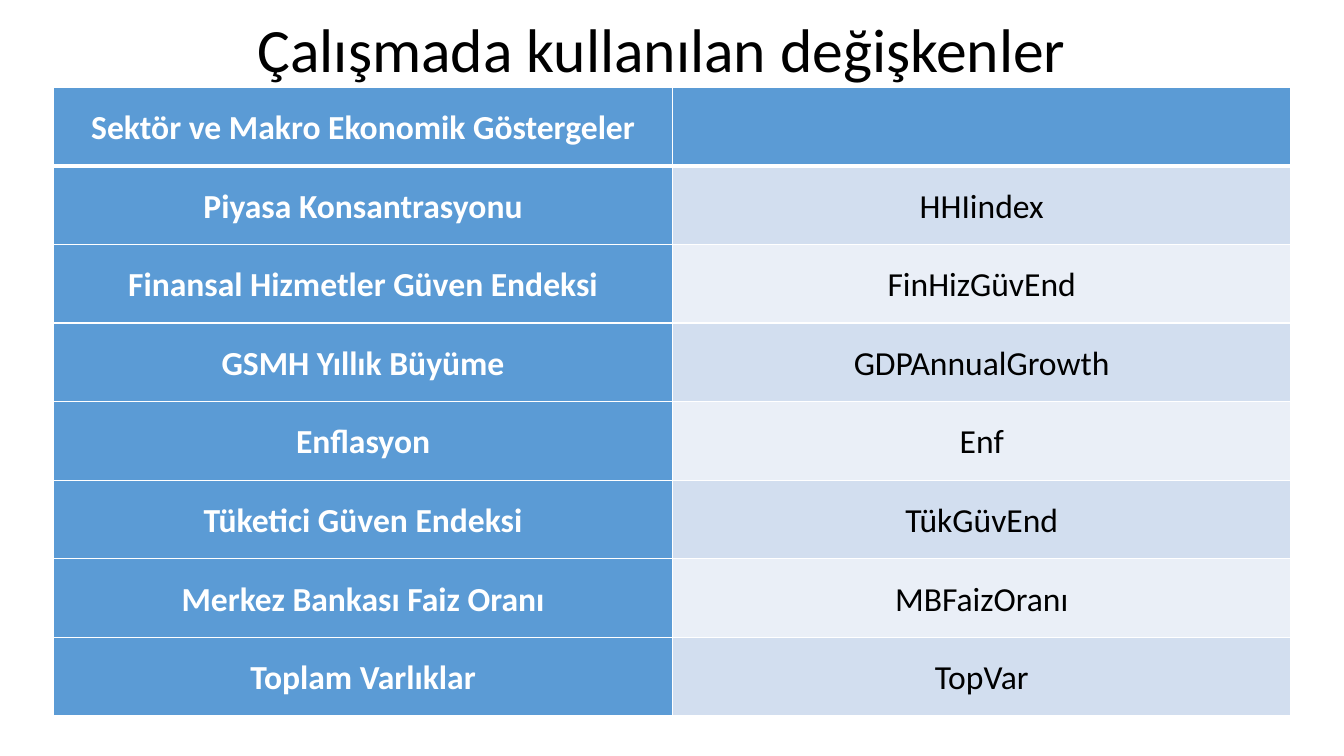
"""Build the slide that lists the sector and macroeconomic variables of the study."""
from lxml.etree import SubElement
from pptx import Presentation
from pptx.dml.color import RGBColor
from pptx.enum.text import MSO_ANCHOR, PP_ALIGN
from pptx.oxml.ns import qn
from pptx.util import Pt


def color(hex_code):
    return RGBColor.from_string(hex_code)


def add_border(cell, side, width):
    line = SubElement(cell._tc.get_or_add_tcPr(), qn(f"a:ln{side}"), w=str(Pt(width)))
    SubElement(SubElement(line, qn("a:solidFill")), qn("a:srgbClr"), val="FFFFFF")


variables = [
    ("Sektör ve Makro Ekonomik Göstergeler", ""),
    ("Piyasa Konsantrasyonu", "HHIindex"),
    ("Finansal Hizmetler Güven Endeksi", "FinHizGüvEnd"),
    ("GSMH Yıllık Büyüme", "GDPAnnualGrowth"),
    ("Enflasyon", "Enf"),
    ("Tüketici Güven Endeksi", "TükGüvEnd"),
    ("Merkez Bankası Faiz Oranı", "MBFaizOranı"),
    ("Toplam Varlıklar", "TopVar"),
]
bands = ["EAEFF7", "D2DEEF"]
row_height = 56.16
column_width = 441.9

presentation = Presentation()
presentation.slide_width, presentation.slide_height = Pt(960), Pt(540)
slide = presentation.slides.add_slide(presentation.slide_layouts[5])

heading = slide.shapes.title
heading.left, heading.top, heading.width, heading.height = Pt(59), Pt(10), Pt(828), Pt(104.4)
heading.text_frame.vertical_anchor = MSO_ANCHOR.TOP
heading.text_frame.text = "Çalışmada kullanılan değişkenler"
heading_line = heading.text_frame.paragraphs[0]
heading_line.alignment = PP_ALIGN.CENTER
heading_line.line_spacing = 0.9
heading_line.font.name = "Calibri"
heading_line.font.size = Pt(44)
heading_line.font.color.rgb = color("000000")

variable_table = slide.shapes.add_table(
    len(variables), 2, Pt(38.4), Pt(62.2), Pt(2 * column_width), Pt(len(variables) * row_height)
).table
for column in variable_table.columns:
    column.width = Pt(column_width)

for row, names in enumerate(variables):
    variable_table.rows[row].height = Pt(row_height)
    for column, name in enumerate(names):
        cell = variable_table.cell(row, column)
        emphasized = row == 0 or column == 0
        cell.margin_left = cell.margin_right = Pt(5)
        cell.margin_top = cell.margin_bottom = Pt(0)
        cell.vertical_anchor = MSO_ANCHOR.TOP
        for side in "LRTB":
            under_header = (row, side) in [(0, "B"), (1, "T")]
            add_border(cell, side, 3 if under_header else 1)
        cell.fill.solid()
        cell.fill.fore_color.rgb = color("5B9BD5" if emphasized else bands[row % 2])
        cell.text = name
        label = cell.text_frame.paragraphs[0]
        label.alignment = PP_ALIGN.CENTER
        label.line_spacing = 1.5
        label.font.name = "Calibri"
        label.font.size = Pt(24)
        label.font.bold = emphasized
        label.font.color.rgb = color("FFFFFF" if emphasized else "000000")

presentation.save("out.pptx")
